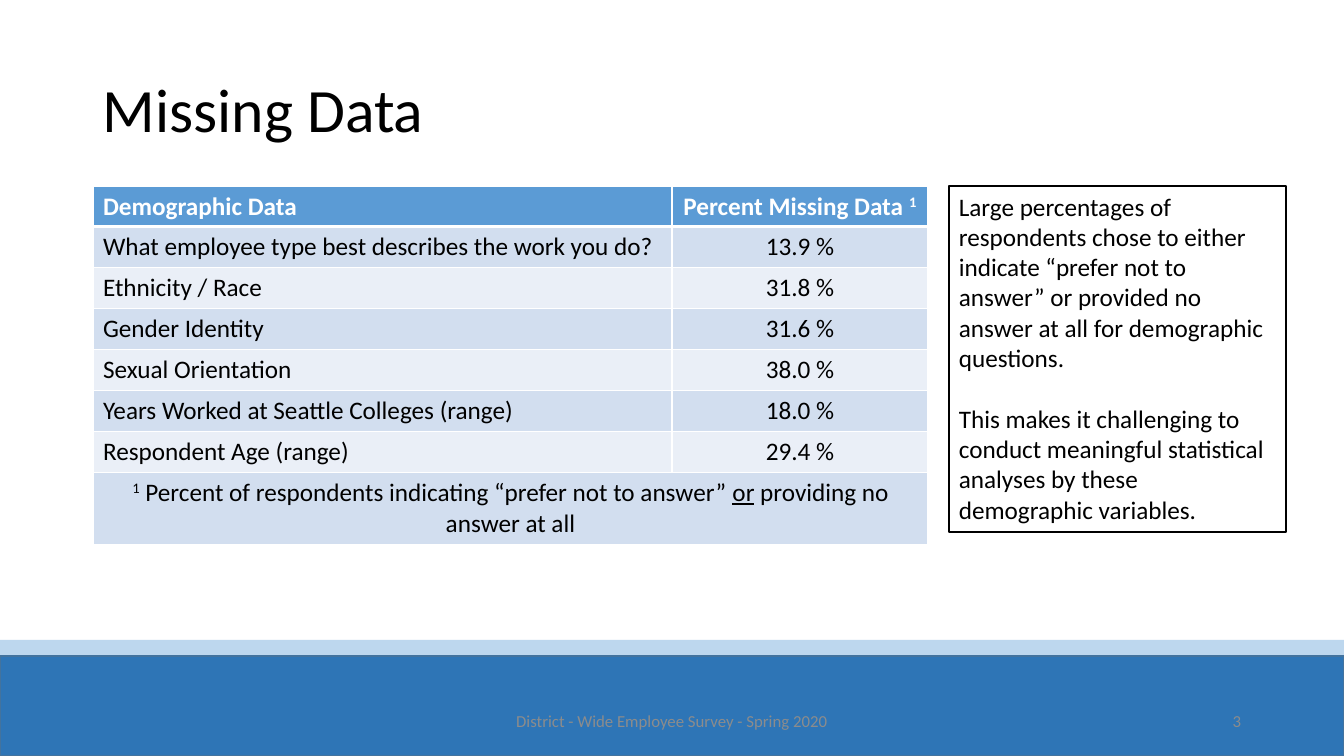
from lxml import etree
from pptx import Presentation
from pptx.dml.color import RGBColor
from pptx.enum.shapes import MSO_SHAPE
from pptx.enum.text import MSO_ANCHOR, MSO_AUTO_SIZE, PP_ALIGN
from pptx.oxml.ns import qn
from pptx.util import Emu, Pt

# Content: a paragraph is a list of (text, style) runs
TITLE = [[("Missing Data", "")]]
FOOTER = [[("District - Wide Employee Survey - Spring 2020", "")]]
SLIDE_NUMBER = [[("3", "")]]
TABLE_HEADER = [
    [("Demographic Data", "")],
    [("Percent Missing Data ", ""), ("1", "superscript")],
]
MISSING_PERCENTS = [
    ("What employee type best describes the work you do?", "13.9 %"),
    ("Ethnicity / Race", "31.8 %"),
    ("Gender Identity", "31.6 %"),
    ("Sexual Orientation", "38.0 %"),
    ("Years Worked at Seattle Colleges (range)", "18.0 %"),
    ("Respondent Age (range)", "29.4 %"),
]
FOOTNOTE = [
    ("1", "superscript"),
    (" Percent of respondents indicating “prefer not to answer” ", ""),
    ("or", "underline"),
    (" providing no answer at all", ""),
]
COMMENTARY = [
    [("Large percentages of respondents chose to either indicate “prefer not to "
      "answer” or provided no answer at all for demographic questions.", "")],
    [("This makes it challenging to conduct meaningful statistical analyses by "
      "these demographic variables.", "")],
]

# Layout in px
EMU_PER_PX = 914400 / 100.8
SLIDE_WIDTH, SLIDE_HEIGHT = 1344, 756
BAND_HEIGHT = 100
LIGHT_BAND_TOP, DARK_BAND_TOP = 640, 656
LEFT, CONTENT_TOP = 93, 186
COLUMN_WIDTHS = (579, 256)
HEADER_HEIGHT, ROW_HEIGHT, FOOTNOTE_HEIGHT = 38, 41, 72
FOOTER_TOP, FOOTER_HEIGHT = 701, 40

# Style
FONT = "Calibri"
WHITE = RGBColor(0xFF, 0xFF, 0xFF)
BLACK = RGBColor(0x00, 0x00, 0x00)
GRAY = RGBColor(0x8C, 0x8C, 0x8C)
LIGHT_BLUE = RGBColor(0xBD, 0xD7, 0xEE)
DARK_BLUE = RGBColor(0x2E, 0x75, 0xB6)
OUTLINE_BLUE = RGBColor(0x43, 0x73, 0x9E)
HEADER_BLUE = RGBColor(0x5B, 0x9B, 0xD5)
ROW_FILLS = (RGBColor(0xD2, 0xDE, 0xEF), RGBColor(0xEA, 0xEF, 0xF7))
ALIGN_LEFT, ALIGN_CENTER, ALIGN_RIGHT = PP_ALIGN.LEFT, PP_ALIGN.CENTER, PP_ALIGN.RIGHT
TOP, MIDDLE = MSO_ANCHOR.TOP, MSO_ANCHOR.MIDDLE
RECTANGLE = MSO_SHAPE.RECTANGLE
GROW_SHAPE = MSO_AUTO_SIZE.SHAPE_TO_FIT_TEXT


def px(length):
    return Emu(round(length * EMU_PER_PX))


def write_text(frame, paragraphs, size=18, color=BLACK, bold=False,
               align=ALIGN_LEFT, anchor=TOP, line_spacing=None, gap=0):
    frame.word_wrap = True
    frame.vertical_anchor = anchor
    for index, runs in enumerate(paragraphs):
        paragraph = frame.add_paragraph() if index else frame.paragraphs[0]
        paragraph.alignment = align
        if line_spacing:
            paragraph.line_spacing = line_spacing
        if index:
            paragraph.space_before = Pt(gap)
        for text, style in runs:
            run = paragraph.add_run()
            run.text = text
            font = run.font
            font.name, font.size, font.bold = FONT, Pt(size), bold
            font.color.rgb = color
            if style == "underline":
                font.underline = True
            elif style == "superscript":
                run._r.get_or_add_rPr().set("baseline", "30000")


def add_text_box(slide, box, paragraphs, **text_format):
    text_box = slide.shapes.add_textbox(*map(px, box))
    write_text(text_box.text_frame, paragraphs, **text_format)


def add_rectangle(slide, box, fill=None, line=None):
    shape = slide.shapes.add_shape(RECTANGLE, *map(px, box))
    shape.shadow.inherit = False
    if fill is None:
        shape.fill.background()
    else:
        shape.fill.solid()
        shape.fill.fore_color.rgb = fill
    if line is None:
        shape.line.fill.background()
    else:
        shape.line.color.rgb = line
        shape.line.width = Pt(1)
    return shape


def style_cell(cell, fill, bottom_width=1):
    properties = cell._tc.get_or_add_tcPr()
    for side, width in (("L", 1), ("R", 1), ("T", 1), ("B", bottom_width)):
        border = etree.SubElement(properties, qn(f"a:ln{side}"), w=str(Pt(width)))
        solid = etree.SubElement(border, qn("a:solidFill"))
        etree.SubElement(solid, qn("a:srgbClr"), val=str(WHITE))
    cell.fill.solid()
    cell.fill.fore_color.rgb = fill


def add_missing_data_table(slide):
    rows = [TABLE_HEADER]
    rows += [[[(text, "")] for text in row] for row in MISSING_PERCENTS]
    rows.append([FOOTNOTE])
    heights = [HEADER_HEIGHT] + [ROW_HEIGHT] * len(MISSING_PERCENTS) + [FOOTNOTE_HEIGHT]
    box = (LEFT, CONTENT_TOP, sum(COLUMN_WIDTHS), sum(heights))
    table = slide.shapes.add_table(len(rows), len(COLUMN_WIDTHS), *map(px, box)).table
    for column, width in zip(table.columns, COLUMN_WIDTHS):
        column.width = px(width)

    last = len(rows) - 1
    table.cell(last, 0).merge(table.cell(last, 1))
    for index, (row, height) in enumerate(zip(rows, heights)):
        table.rows[index].height = px(height)
        is_header = index == 0
        fill = HEADER_BLUE if is_header else ROW_FILLS[(index - 1) % 2]
        for cell in table.rows[index].cells:
            style_cell(cell, fill, bottom_width=3 if is_header else 1)
        for column, runs in enumerate(row):
            centered = column == 1 or index == last
            write_text(table.cell(index, column).text_frame, [runs],
                       color=WHITE if is_header else BLACK, bold=is_header,
                       align=ALIGN_CENTER if centered else ALIGN_LEFT)


def main():
    presentation = Presentation()
    presentation.slide_width = px(SLIDE_WIDTH)
    presentation.slide_height = px(SLIDE_HEIGHT)
    slide = presentation.slides.add_slide(presentation.slide_layouts[6])

    # Bottom bands
    add_rectangle(slide, (0, LIGHT_BAND_TOP, SLIDE_WIDTH, BAND_HEIGHT), LIGHT_BLUE)
    add_rectangle(slide, (0, DARK_BAND_TOP, SLIDE_WIDTH, BAND_HEIGHT),
                  DARK_BLUE, OUTLINE_BLUE)

    # Title and table
    add_text_box(slide, (LEFT, 40, 1159, 146), TITLE, size=44,
                 anchor=MIDDLE, line_spacing=0.9)
    add_missing_data_table(slide)

    # Footer
    add_text_box(slide, (445, FOOTER_TOP, 454, FOOTER_HEIGHT), FOOTER, size=12,
                 color=GRAY, align=ALIGN_CENTER, anchor=MIDDLE)
    add_text_box(slide, (949, FOOTER_TOP, 302, FOOTER_HEIGHT), SLIDE_NUMBER, size=12,
                 color=GRAY, align=ALIGN_RIGHT, anchor=MIDDLE)

    # Commentary
    commentary = add_rectangle(slide, (949, CONTENT_TOP, 337, 346), line=BLACK)
    write_text(commentary.text_frame, COMMENTARY, gap=22)
    commentary.text_frame.auto_size = GROW_SHAPE

    presentation.save("out.pptx")


if __name__ == "__main__":
    main()
